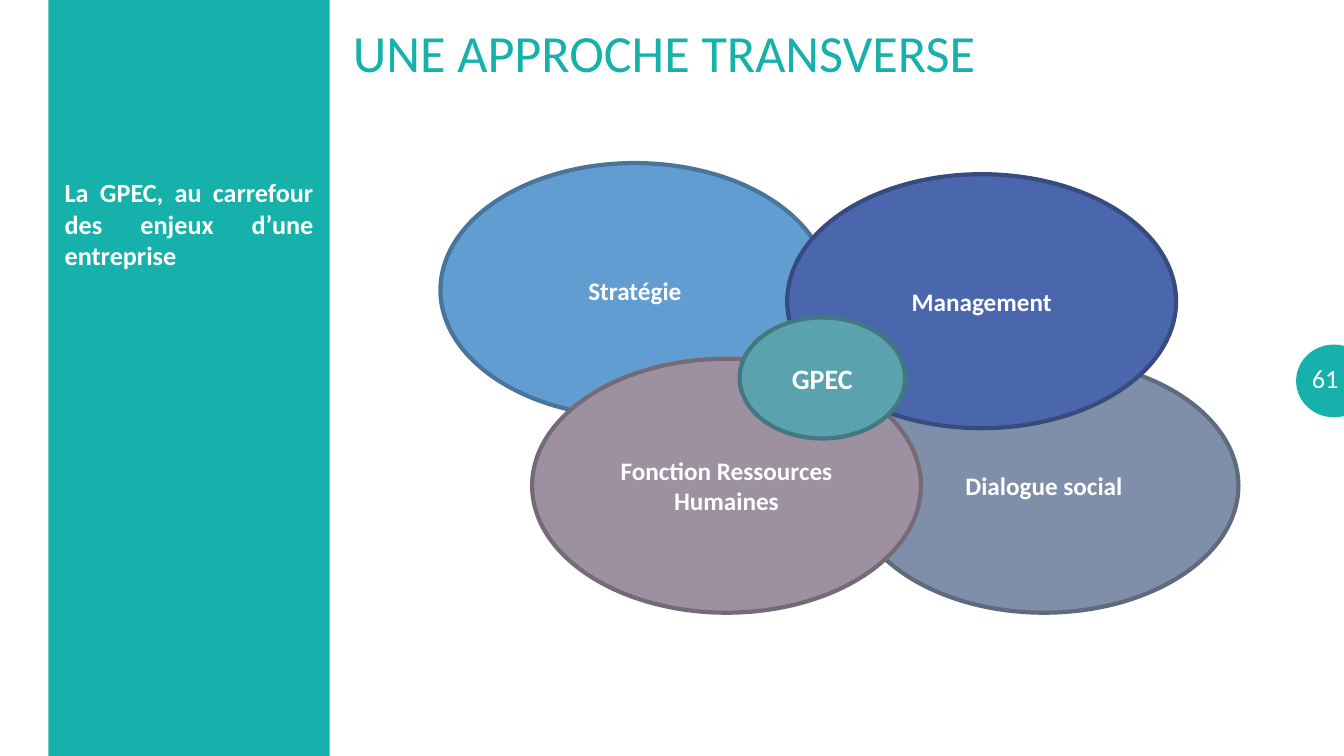
from lxml import etree
from pptx import Presentation
from pptx.dml.color import RGBColor
from pptx.enum.shapes import MSO_SHAPE as SHAPE
from pptx.enum.text import MSO_ANCHOR as ANCHOR, MSO_AUTO_SIZE as AUTO, PP_ALIGN as ALIGN
from pptx.oxml.ns import qn
from pptx.util import Cm, Pt

TEAL, WHITE = "16B1AB", "FFFFFF"


def add_filled(kind, box, fill, line=None, width=3):
    """Add a shadowless shape; box is left, top, width, height in cm."""
    sp = s.shapes.add_shape(kind, *map(Cm, box))
    sp.shadow.inherit = False
    sp.fill.solid()
    sp.fill.fore_color.rgb = RGBColor.from_string(fill)
    if line:
        sp.line.color.rgb = RGBColor.from_string(line)
        sp.line.width = Pt(width)
    else:
        sp.line.fill.background()
    return sp


def write(sp, text, size, align, anchor=ANCHOR.MIDDLE, color=WHITE, bold=False):
    tf = sp.text_frame
    tf.word_wrap = True
    tf.auto_size = AUTO.NONE
    tf.vertical_anchor = anchor
    p = tf.paragraphs[0]
    p.alignment = align
    p.space_before = Pt(0)
    r = p.add_run()
    r.text = text
    r.font.name = "Calibri"
    r.font.size = Pt(size)
    r.font.bold = bold
    r.font.color.rgb = RGBColor.from_string(color)
    return tf


prs = Presentation()
prs.slide_width, prs.slide_height = Cm(33.87), Cm(19.05)
s = prs.slides.add_slide(prs.slide_layouts[1])
title, body = s.shapes.title, s.placeholders[1]

# Side band, behind the body text
band = add_filled(SHAPE.RECTANGLE, (1.22, 0, 7.09, 19.05), TEAL)
title.element.addprevious(band.element)

# Title
title.left, title.top, title.width, title.height = Cm(8.64), Cm(0.33), Cm(26.9), Cm(1.96)
write(title, "UNE APPROCHE TRANSVERSE", 37.3, ALIGN.LEFT, color=TEAL)

# Side text
body.left, body.top, body.width, body.height = Cm(1.22), Cm(4.04), Cm(7.09), Cm(13.61)
pPr = body.text_frame.paragraphs[0]._p.get_or_add_pPr()
pPr.set("marL", "0")
pPr.set("indent", "0")
etree.SubElement(pPr, qn("a:buNone"))
tf = write(body, "La GPEC, au carrefour des enjeux d’une entreprise", 18.7,
           ALIGN.JUSTIFY, ANCHOR.TOP, bold=True)
tf.margin_left = tf.margin_right = tf.margin_top = tf.margin_bottom = Cm(0.41)

# Page number
add_filled(SHAPE.OVAL, (32.69, 8.71, 1.85, 1.78), TEAL, TEAL, 1.5)
number = s.shapes.add_textbox(Cm(32.59), Cm(9.02), Cm(1.47), Cm(1.02))
tf = write(number, "61", 18.7, ALIGN.RIGHT)
tf.margin_left = tf.margin_right = Cm(0.33)
tf.margin_top = tf.margin_bottom = Cm(0.18)

# Overlapping ellipses, from back to front
LARGE, SMALL = (9.8, 6.4), (4.17, 3.05)
ellipses = [
    ("Dialogue social", (21.41, 9.04), LARGE, "7F8FA9", "5E6A7D", 18),
    ("Stratégie", (11.1, 4.11), LARGE, "629DD1", "49749B", 18),
    ("Management", (19.84, 4.39), LARGE, "4A66AC", "374B7F", 18),
    ("Fonction Ressources Humaines", (13.41, 9.04), LARGE, "9D90A0", "746B76", 18),
    ("GPEC", (18.64, 8), SMALL, "5AA2AE", "437881", 20),
]
for label, place, dims, fill, line, size in ellipses:
    oval = add_filled(SHAPE.OVAL, place + dims, fill, line)
    write(oval, label, size, ALIGN.CENTER, bold=True)

prs.save("out.pptx")
